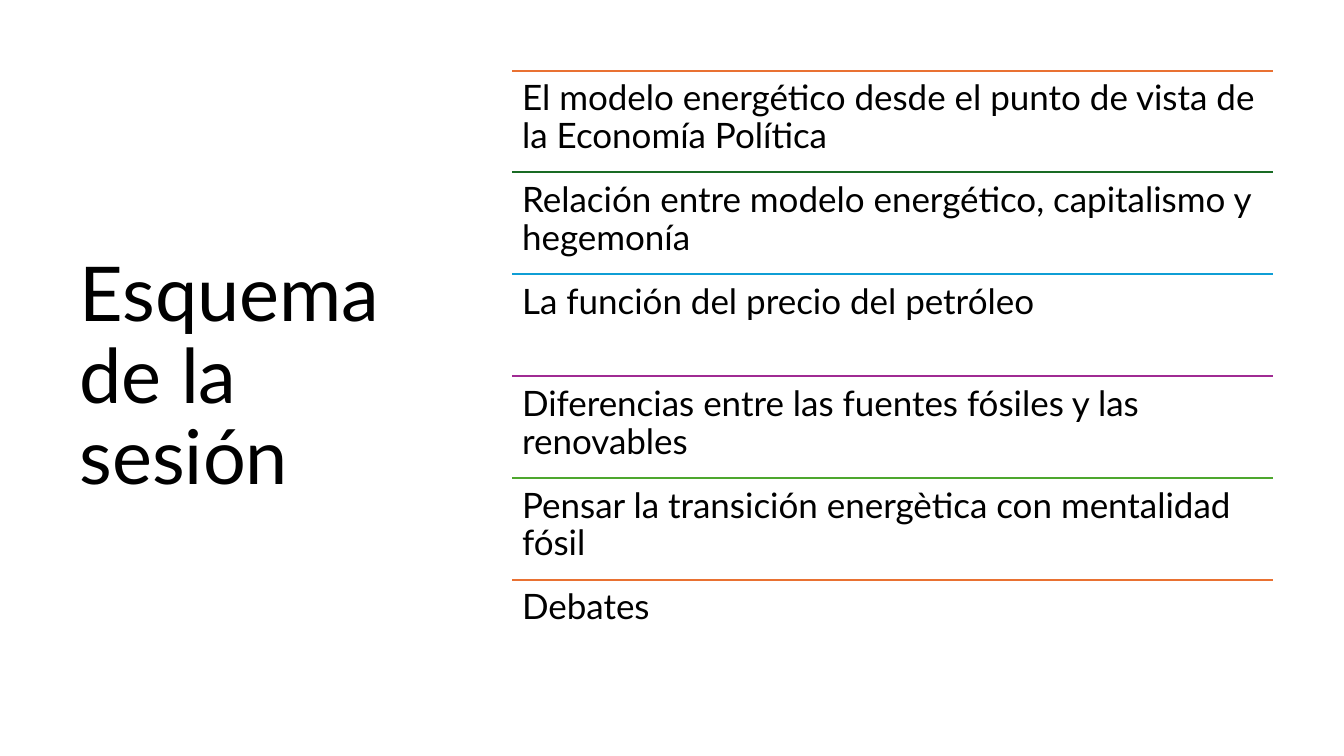
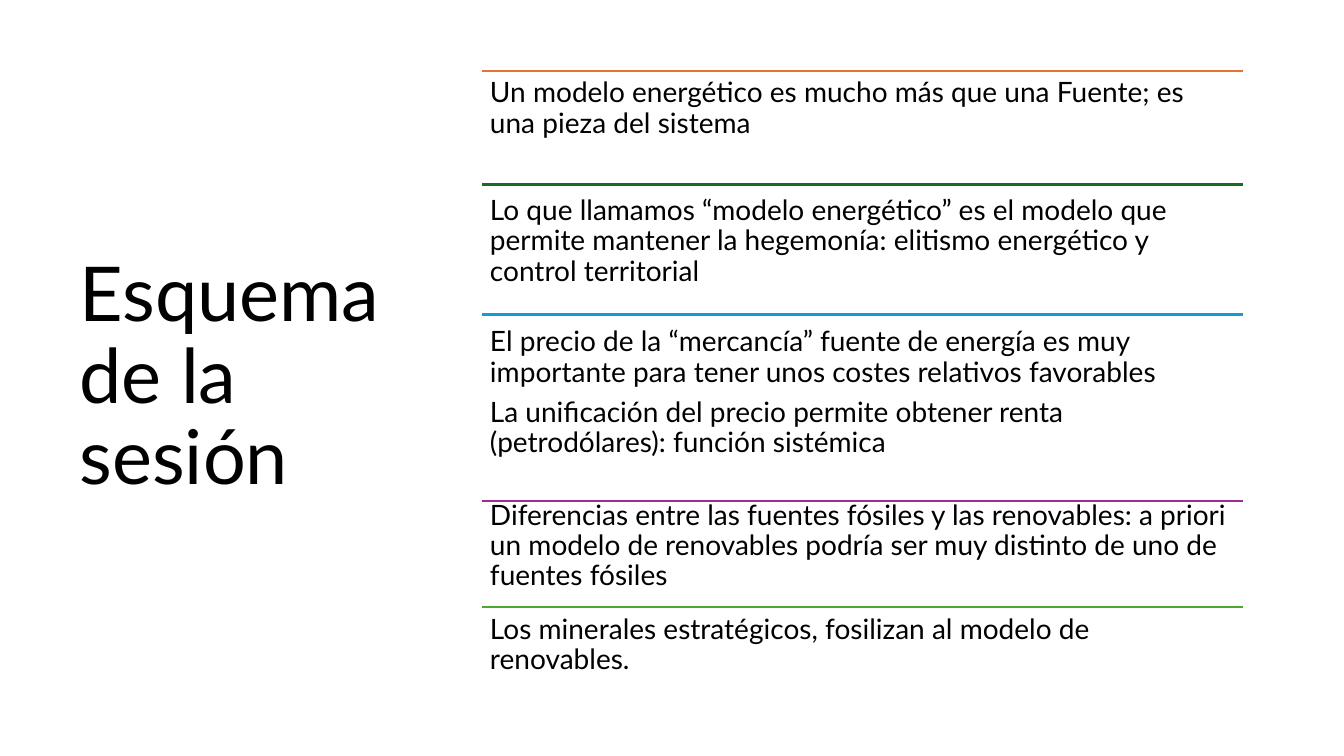
from pptx import Presentation
from pptx.dml.color import RGBColor
from pptx.enum.shapes import MSO_CONNECTOR
from pptx.enum.text import MSO_ANCHOR, PP_ALIGN
from pptx.oxml.ns import qn
from pptx.util import Inches, Pt
from lxml import etree

STRAIGHT = MSO_CONNECTOR.STRAIGHT
TOP, MIDDLE = MSO_ANCHOR.TOP, MSO_ANCHOR.MIDDLE
LEFT = PP_ALIGN.LEFT

TITLE = "Esquema de la sesión"
AGENDA = [
    "El modelo energético desde el punto de vista de la Economía Política",
    "Relación entre modelo energético, capitalismo y hegemonía",
    "La función del precio del petróleo",
    "Diferencias entre las fuentes fósiles y las renovables",
    "Pensar la transición energètica con mentalidad fósil",
    "Debates",
]
# Rule top, text top, text height, paragraphs
CONCLUSIONS = [
    (0.7, 0.7, 1.33, [
        "Un modelo energético es mucho más que una Fuente; es una pieza del sistema"]),
    (1.83, 1.87, 1.33, [
        "Lo que llamamos “modelo energético” es el modelo que permite mantener "
        "la hegemonía: elitismo energético y control territorial"]),
    (3.12, 3.17, 1.33, [
        "El precio de la “mercancía” fuente de energía es muy importante para "
        "tener unos costes relativos favorables",
        "La unificación del precio permite obtener renta (petrodólares): función sistémica"]),
    (4.97, 4.89, 1.33, [
        "Diferencias entre las fuentes fósiles y las renovables: a priori un modelo "
        "de renovables podría ser muy distinto de uno de fuentes fósiles"]),
    (6.02, 6.02, 0.73, [
        "Los minerales estratégicos, fosilizan al modelo de renovables."]),
]


def color(hex_value):
    return RGBColor.from_string(hex_value)


class Deck:
    FONT = "Lato"
    INK = "000000"
    BACKGROUND = "FFFFFF"
    ACCENTS = ["E97132", "196B24", "0F9ED5", "A02B93", "4EA72E"]
    LIST_WIDTH = 7.55

    def __init__(self):
        self.presentation = Presentation()
        self.presentation.slide_width = Inches(13.33)
        self.presentation.slide_height = Inches(7.5)
        self.slide = None

    def add_slide(self, title):
        self.slide = self.presentation.slides.add_slide(self.presentation.slide_layouts[6])
        fill = self.slide.background.fill
        fill.solid()
        fill.fore_color.rgb = color(self.BACKGROUND)
        self.text(0.69, 0.7, 3.74, 6.11, [title], 54, (0.1, 0.05), anchor=MIDDLE)

    def text(self, left, top, width, height, paragraphs, size, insets,
             anchor=TOP, space_after=0):
        """Add a text box; insets are (horizontal, vertical) inches."""
        shape = self.slide.shapes.add_textbox(
            Inches(left), Inches(top), Inches(width), Inches(height))
        frame = shape.text_frame
        frame.word_wrap = True
        frame.vertical_anchor = anchor
        frame.margin_left = frame.margin_right = Inches(insets[0])
        frame.margin_top = frame.margin_bottom = Inches(insets[1])
        frame.text = "\n".join(paragraphs)
        for paragraph in frame.paragraphs:
            paragraph.alignment = LEFT
            paragraph.line_spacing = 0.9
            paragraph.space_after = Pt(space_after)
            paragraph.font.name = self.FONT
            paragraph.font.size = Pt(size)
            paragraph.font.color.rgb = color(self.INK)

    def rule(self, left, top, hex_value):
        connector = self.slide.shapes.add_connector(
            STRAIGHT, Inches(left), Inches(top),
            Inches(left + self.LIST_WIDTH), Inches(top))
        connector.line.color.rgb = color(hex_value)
        connector.line.width = Pt(1.5)
        etree.SubElement(connector._element.spPr, qn("a:effectLst"))

    def ruled_list(self, left, items, size, inset):
        """Add (rule top, text top, height, paragraphs) items with cycling accents."""
        for index, (rule_top, text_top, height, paragraphs) in enumerate(items):
            self.rule(left, rule_top, self.ACCENTS[index % len(self.ACCENTS)])
            self.text(left, text_top, self.LIST_WIDTH, height, paragraphs, size,
                      (inset, inset), space_after=0.35 * size)

    def save(self):
        self.presentation.save("out.pptx")


def main():
    deck = Deck()

    deck.add_slide(TITLE)
    row_height = 1.01
    tops = [0.7 + index * row_height for index in range(len(AGENDA))]
    deck.ruled_list(5.08, [(top, top, row_height, [entry])
                           for top, entry in zip(tops, AGENDA)], 25, 0.1)

    deck.add_slide(TITLE)
    deck.ruled_list(4.78, CONCLUSIONS, 20, 0.08)

    deck.save()


if __name__ == "__main__":
    main()
